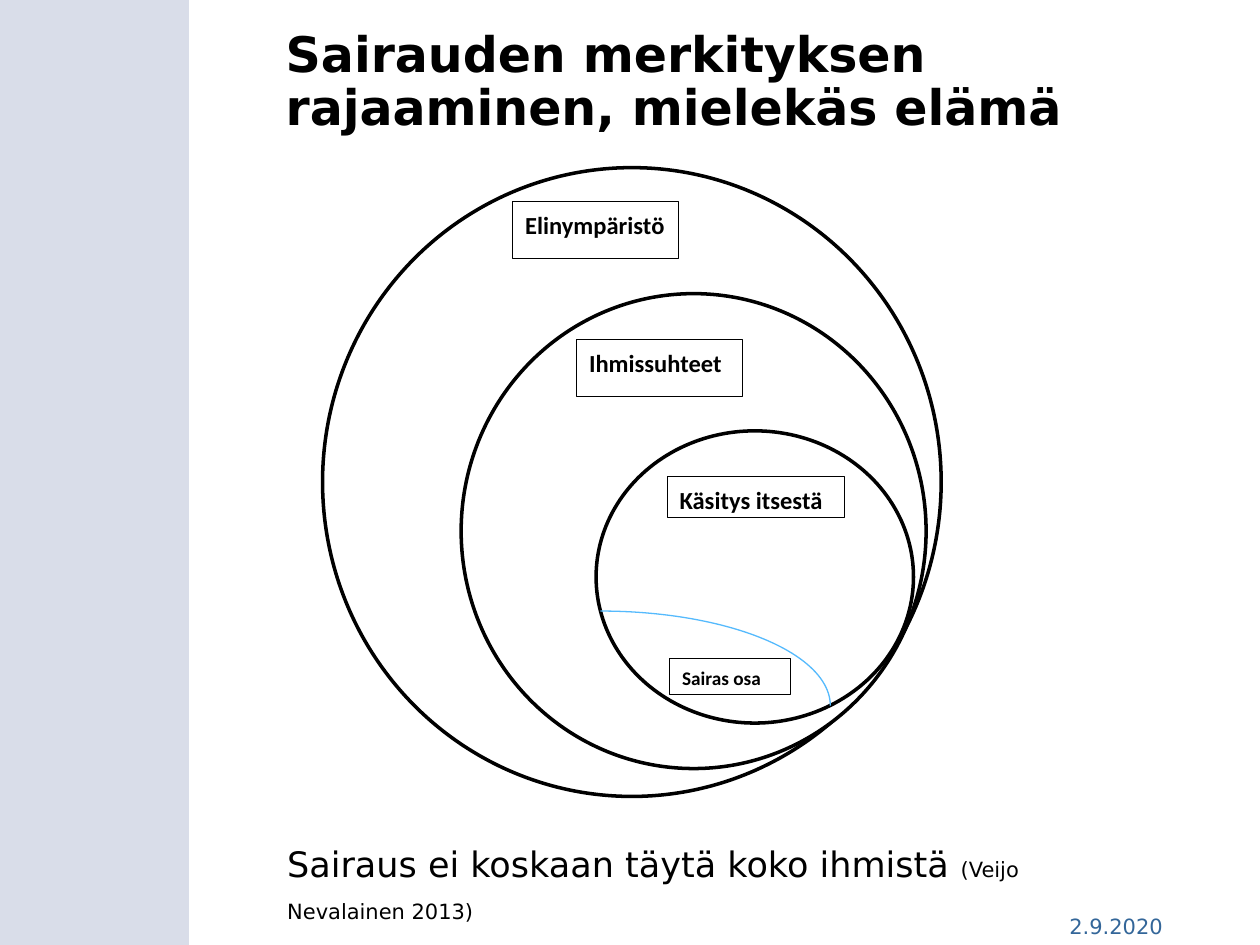
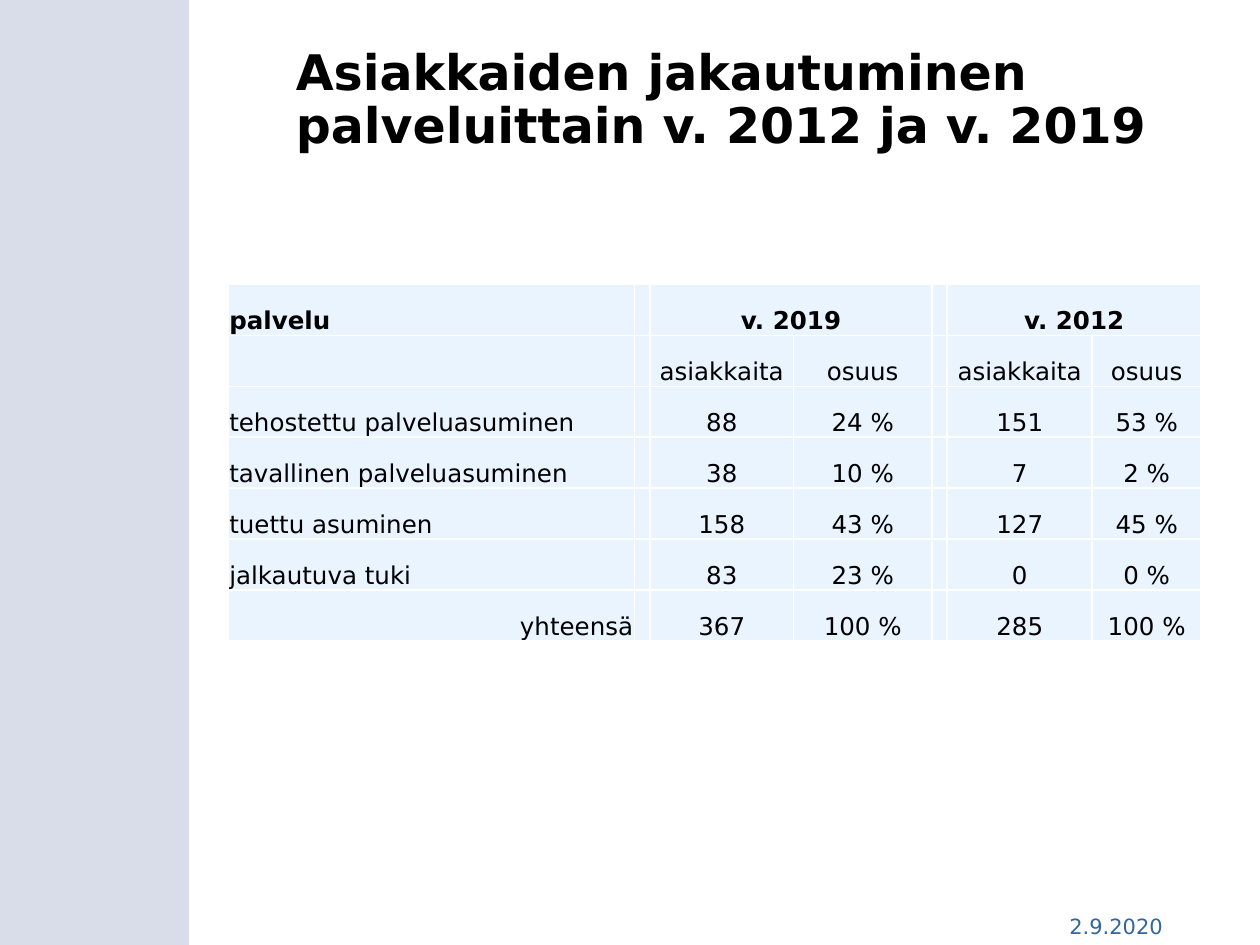
"""Build two slides on the place of illness in life and on clients by service."""
import lxml.etree
import pptx
import pptx.dml.color
import pptx.enum.shapes
import pptx.enum.text
import pptx.oxml.ns
import pptx.util

Pt = pptx.util.Pt
RGBColor = pptx.dml.color.RGBColor
SHAPE = pptx.enum.shapes.MSO_SHAPE
ALIGN = pptx.enum.text.PP_ALIGN
ANCHOR = pptx.enum.text.MSO_ANCHOR
qn = pptx.oxml.ns.qn

BLACK = RGBColor(0x00, 0x00, 0x00)
WHITE = RGBColor(0xFF, 0xFF, 0xFF)
BAND = RGBColor(0xD9, 0xDD, 0xE9)
DATE = RGBColor(0x33, 0x66, 0x99)
ARC = RGBColor(0x55, 0xBA, 0xFD)
CELL = RGBColor(0xEA, 0xF4, 0xFF)
BODY_FONT = "DejaVu Sans"
LABEL_FONT = "Calibri"


class Deck:
    """Holds the presentation, its style and the current slide."""

    def __init__(self):
        self.presentation = pptx.Presentation()
        self.presentation.slide_width = Pt(720)
        self.presentation.slide_height = Pt(540)
        self.slide = None

    def new_slide(self, title, left, top):
        layout = self.presentation.slide_layouts[6]
        self.slide = self.presentation.slides.add_slide(layout)
        self.shape(SHAPE.RECTANGLE, (0, 0, 108, 540), fill=BAND)
        self.text((604, 518.4, 76.3, 21.6), [("2.9.2020", 12)], color=DATE, wrap=False)
        heading = self.text((left, top, 522, 72), [(title, 28)], bold=True)
        heading.line_spacing = 0.9

    def format_run(self, run, size, font=BODY_FONT, color=BLACK, bold=False):
        run.font.name = font
        run.font.size = Pt(size)
        run.font.bold = bold
        run.font.color.rgb = color

    def text(self, box, parts, color=BLACK, bold=False, wrap=True):
        frame = self.slide.shapes.add_textbox(*map(Pt, box)).text_frame
        frame.word_wrap = wrap
        paragraph = frame.paragraphs[0]
        for words, size in parts:
            run = paragraph.add_run()
            run.text = words
            self.format_run(run, size, color=color, bold=bold)
        return paragraph

    def shape(self, kind, box, fill=None, line=None, width=0):
        shape = self.slide.shapes.add_shape(kind, *map(Pt, box))
        shape.shadow.inherit = False
        if fill is None:
            shape.fill.background()
        else:
            shape.fill.solid()
            shape.fill.fore_color.rgb = fill
        if line is None:
            shape.line.fill.background()
        else:
            shape.line.color.rgb = line
            shape.line.width = Pt(width)
        return shape

    def label(self, words, box, size):
        shape = self.shape(SHAPE.RECTANGLE, box, WHITE, BLACK, 0.5)
        frame = shape.text_frame
        frame.text = words
        frame.vertical_anchor = ANCHOR.TOP
        paragraph = frame.paragraphs[0]
        paragraph.alignment = ALIGN.LEFT
        paragraph.line_spacing = 1.07
        paragraph.space_after = Pt(8)
        self.format_run(paragraph.runs[0], size, LABEL_FONT, bold=True)

    def borders(self, cell, color, width):
        properties = cell._tc.get_or_add_tcPr()
        for side in ("a:lnL", "a:lnR", "a:lnT", "a:lnB"):
            line = lxml.etree.SubElement(properties, qn(side), w=str(Pt(width)))
            fill = lxml.etree.SubElement(line, qn("a:solidFill"))
            lxml.etree.SubElement(fill, qn("a:srgbClr"), val=str(color))

    def cell(self, cell, words, alignment, bold):
        cell.margin_left = cell.margin_right = cell.margin_top = Pt(0.72)
        cell.margin_bottom = 0
        cell.vertical_anchor = ANCHOR.BOTTOM
        self.borders(cell, WHITE, 1)
        cell.fill.solid()
        cell.fill.fore_color.rgb = CELL
        cell.text_frame.text = words
        paragraph = cell.text_frame.paragraphs[0]
        paragraph.alignment = alignment
        for run in paragraph.runs:
            self.format_run(run, 14, bold=bold)

    def table(self, left, top, widths, row_height, rows, merges):
        frame = self.slide.shapes.add_table(
            len(rows), len(widths), Pt(left), Pt(top),
            Pt(sum(widths)), Pt(row_height * len(rows)))
        table = frame.table
        table.first_row = table.horz_banding = False
        for column, width in zip(table.columns, widths):
            column.width = Pt(width)
        for row_index, row in enumerate(rows):
            table.rows[row_index].height = Pt(row_height)
            for column_index, words in enumerate(row):
                alignment = ALIGN.CENTER if column_index else ALIGN.LEFT
                if words == "yhteensä":
                    alignment = ALIGN.RIGHT
                self.cell(table.cell(row_index, column_index), words,
                          alignment, row_index == 0)
        for first, last in merges:
            table.cell(0, first).merge(table.cell(0, last))


def build_circles(deck):
    deck.new_slide("Sairauden merkityksen rajaaminen, mielekäs elämä", 156.2, 13.7)
    for circle in ((184.3, 95.8, 353.5, 359.3),
                   (263.5, 167.8, 265.7, 271.4),
                   (340.6, 246.2, 181.4, 167)):
        deck.shape(SHAPE.OVAL, circle, WHITE, BLACK, 2)
    ill_part = deck.shape(SHAPE.ARC, (212.4, 349.2, 262.1, 108), line=ARC, width=0.75)
    ill_part.adjustments[0] = 161.79
    ill_part.adjustments[1] = 0
    for words, box, size in (
            ("Elinympäristö", (293, 115.2, 95, 32.4), 14),
            ("Ihmissuhteet", (329.5, 194.2, 95, 32.4), 14),
            ("Käsitys itsestä", (381.2, 272.2, 101.5, 23.8), 14),
            ("Sairas osa", (382.7, 376.4, 69.1, 20.2), 11)):
        deck.label(words, box, size)
    deck.text((157, 478.1, 452.9, 55.4), [
        ("Sairaus ei koskaan täytä koko ihmistä ", 20),
        ("(Veijo Nevalainen 2013)", 12),
        (" ", 20)])


def build_services(deck):
    deck.new_slide("Asiakkaiden jakautuminen palveluittain v. 2012 ja v. 2019", 162, 23.8)
    services = (
        ("tehostettu palveluasuminen", "88", "24 %", "151", "53 %"),
        ("tavallinen palveluasuminen", "38", "10 %", "7", "2 %"),
        ("tuettu asuminen", "158", "43 %", "127", "45 %"),
        ("jalkautuva tuki", "83", "23 %", "0", "0 %"),
        ("yhteensä", "367", "100 %", "285", "100 %"))
    headings = (
        ("palvelu", "v. 2019", "", "v. 2012", ""),
        ("", "asiakkaita", "osuus", "asiakkaita", "osuus"))
    rows = [(name, "", *year_2019, "", *year_2012)
            for name, *values in headings + services
            for year_2019, year_2012 in [(values[:2], values[2:])]]
    widths = (232.3, 8.9, 81.9, 79.3, 8.6, 82.9, 62.3)
    deck.table(130.3, 162.5, widths, 29.14, rows, ((2, 3), (5, 6)))


def main():
    deck = Deck()
    build_circles(deck)
    build_services(deck)
    deck.presentation.save("out.pptx")


if __name__ == "__main__":
    main()
